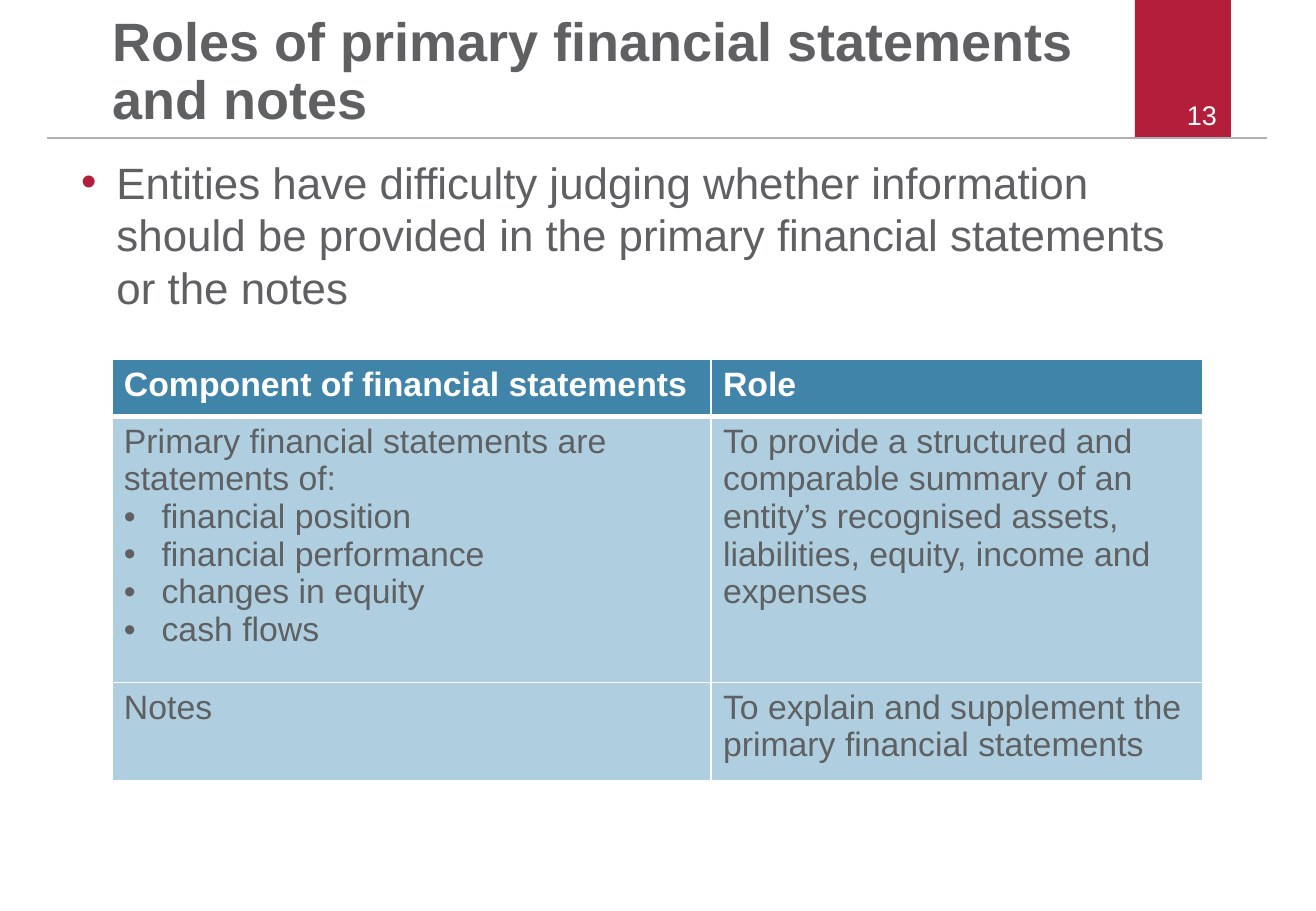
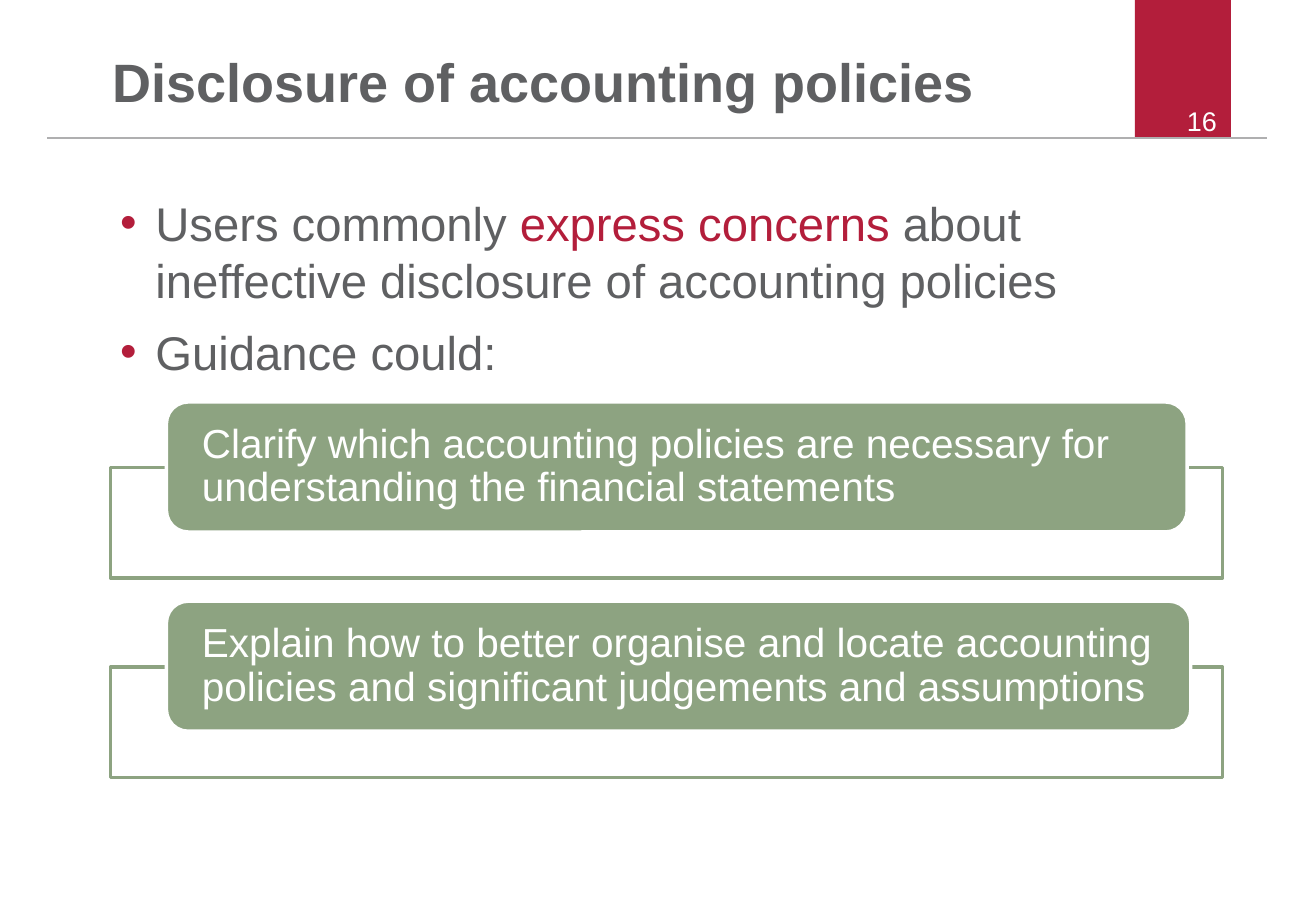
"""Build two slides on financial statement notes and accounting policies."""
from lxml import etree
from pptx import Presentation
from pptx.dml.color import RGBColor
from pptx.enum.shapes import MSO_CONNECTOR, MSO_SHAPE
from pptx.enum.text import MSO_ANCHOR, PP_ALIGN
from pptx.oxml.ns import qn
from pptx.util import Inches, Pt

RECTANGLE, ROUNDED = MSO_SHAPE.RECTANGLE, MSO_SHAPE.ROUNDED_RECTANGLE
STRAIGHT = MSO_CONNECTOR.STRAIGHT
TOP, MIDDLE, BOTTOM = MSO_ANCHOR.TOP, MSO_ANCHOR.MIDDLE, MSO_ANCHOR.BOTTOM
LEFT = PP_ALIGN.LEFT
BLANK_LAYOUT = 6
COLORS = {
    "red": "B31E3B", "text": "5F6062", "rule": "AFAFB0", "white": "FFFFFF",
    "header": "4184A9", "cell": "AFCFE0", "green": "8DA381",
}
FONTS = {
    "title": {"size": Pt(32), "bold": True, "color": "text"},
    "number": {"size": Pt(16), "color": "white"},
    "header": {"size": Pt(20), "bold": True, "color": "white"},
    "cell": {"size": Pt(20), "bold": False, "color": "text"},
    "policy": {"size": Pt(24), "color": "white"},
}


def rgb(name):
    """Return the named colour."""
    return RGBColor.from_string(COLORS[name])


def format_font(font, values):
    """Set the typeface, colour and other attributes of a font."""
    for attribute, value in {"name": "Arial", **values}.items():
        if attribute == "color":
            font.color.rgb = rgb(value)
        else:
            setattr(font, attribute, value)


def format_object(target, values):
    """Set the attributes of an object from a dict."""
    for attribute, value in values.items():
        setattr(target, attribute, value)


def add_bullet(paragraph, margin, hanging, color=None):
    """Give a paragraph a hanging bullet."""
    properties = paragraph._p.get_or_add_pPr()
    properties.set("marL", str(Inches(margin)))
    properties.set("indent", str(-Inches(hanging)))
    if color:
        bullet_color = etree.SubElement(properties, qn("a:buClr"))
        etree.SubElement(bullet_color, qn("a:srgbClr"), val=COLORS[color])
    etree.SubElement(properties, qn("a:buFont"), typeface="Arial")
    etree.SubElement(properties, qn("a:buChar"), char="•")


def add_run(paragraph, text, values):
    """Add a formatted run to a paragraph."""
    run = paragraph.add_run()
    run.text = text
    format_font(run.font, values)


def add_text_box(slide, box, anchor=TOP, wrap=True):
    """Add an empty text box and return its text frame."""
    frame = slide.shapes.add_textbox(*map(Inches, box)).text_frame
    format_object(frame, {"word_wrap": wrap, "vertical_anchor": anchor})
    return frame


def add_box(slide, kind, box, fill, line=None):
    """Add a filled shape with an optional 2 pt outline."""
    shape = slide.shapes.add_shape(kind, *map(Inches, box))
    shape.shadow.inherit = False
    shape.fill.solid()
    shape.fill.fore_color.rgb = rgb(fill)
    if line:
        shape.line.color.rgb = rgb(line)
        shape.line.width = Pt(2)
    else:
        shape.line.fill.background()
    return shape


def add_base_slide(presentation, title, title_height, number, number_top):
    """Add a slide with the band, rule, title and slide number."""
    slide = presentation.slides.add_slide(presentation.slide_layouts[BLANK_LAYOUT])
    add_box(slide, RECTANGLE, (9.34, 0, 0.79, 1.14), "red")
    rule = slide.shapes.add_connector(
        STRAIGHT, *map(Inches, (0.39, 1.14, 10.43, 1.14)))
    rule.line.color.rgb = rgb("rule")
    rule.line.width = Pt(1.2)
    etree.SubElement(rule._element.spPr, qn("a:effectLst"))
    paragraph = add_text_box(
        slide, (0.83, 0, 8.53, title_height), BOTTOM).paragraphs[0]
    paragraph.line_spacing = 0.9
    add_run(paragraph, title, FONTS["title"])
    frame = add_text_box(slide, (9.67, number_top, 0.46, 0.37), wrap=False)
    add_run(frame.paragraphs[0], number, FONTS["number"])
    return slide


def add_bullets(slide, box, size, items):
    """Add red-bulleted paragraphs, each a list of text and colour pairs."""
    frame = add_text_box(slide, box)
    for index, runs in enumerate(items):
        paragraph = frame.add_paragraph() if index else frame.paragraphs[0]
        add_bullet(paragraph, 0.64, 0.29, "red")
        format_object(paragraph, {
            "line_spacing": 1.0, "space_before": Pt(9 if index else 0)})
        for text, color in runs:
            add_run(paragraph, text, {"size": Pt(size), "color": color})


def set_borders(cell, widths):
    """Draw white borders of the given widths around a cell."""
    properties = cell._tc.get_or_add_tcPr()
    for side, width in widths.items():
        line = etree.SubElement(properties, qn(f"a:ln{side}"), w=str(Pt(width)))
        fill = etree.SubElement(line, qn("a:solidFill"))
        etree.SubElement(fill, qn("a:srgbClr"), val=COLORS["white"])


def fill_cell(cell, lines, kind, borders):
    """Fill a cell with a first line and bulleted further lines."""
    set_borders(cell, borders)
    cell.fill.solid()
    cell.fill.fore_color.rgb = rgb(kind)
    for index, text in enumerate(lines):
        frame = cell.text_frame
        paragraph = frame.add_paragraph() if index else frame.paragraphs[0]
        if index:
            add_bullet(paragraph, 0.31, 0.31)
        add_run(paragraph, text, FONTS[kind])


def add_role_table(slide, box, widths, heights, rows):
    """Add a table whose first row is the header."""
    table = slide.shapes.add_table(
        len(rows), len(widths), *map(Inches, box)).table
    for column, width in zip(table.columns, widths):
        column.width = Inches(width)
    for index, (row, height) in enumerate(zip(table.rows, heights)):
        row.height = Inches(height)
        borders = {"L": 1, "R": 1, "T": 3 if index == 1 else 1,
                   "B": 1 if index else 3}
        for cell, lines in zip(row.cells, rows[index]):
            fill_cell(cell, lines, "cell" if index else "header", borders)


def add_policy(slide, top, width, text):
    """Add a green rounded label over an outlined frame."""
    add_box(slide, RECTANGLE, (0.91, top + 0.54, 9.15, 0.91), "white", "green")
    label = add_box(slide, ROUNDED, (1.37, top, width, 1.07), "green", "white")
    frame = label.text_frame
    format_object(frame, {
        "word_wrap": True, "vertical_anchor": MIDDLE,
        "margin_left": Inches(0.24), "margin_right": Inches(0.2),
        "margin_top": 0, "margin_bottom": 0})
    paragraph = frame.paragraphs[0]
    format_object(paragraph, {"alignment": LEFT, "line_spacing": 0.9})
    add_run(paragraph, text, FONTS["policy"])


def build_roles_slide(presentation):
    """Build the slide on the roles of statements and notes."""
    slide = add_base_slide(
        presentation, "Roles of primary financial statements and notes",
        1.13, "13", 0.76)
    add_role_table(slide, (0.92, 2.96, 8.98, 3.47), (4.93, 4.05), (0.47, 2.19, 0.81), [
        [["Component of financial statements"], ["Role"]],
        [["Primary financial statements are statements of:",
          "financial position", "financial performance",
          "changes in equity", "cash flows"],
         ["To provide a structured and comparable summary of an entity’s "
          "recognised assets, liabilities, equity, income and expenses"]],
        [["Notes"],
         ["To explain and supplement the primary financial statements"]],
    ])
    add_bullets(slide, (0.22, 1.23, 9.75, 1.1), 26, [
        [("Entities have difficulty judging whether information should be "
          "provided in the primary financial statements or the notes", "text")],
    ])


def build_policies_slide(presentation):
    """Build the slide on disclosure of accounting policies."""
    slide = add_base_slide(
        presentation, "Disclosure of accounting policies", 0.99, "16", 0.81)
    add_bullets(slide, (0.54, 1.55, 9.75, 1.7), 28, [
        [("Users commonly ", "text"), ("express concerns ", "red"),
         ("about ineffective disclosure of accounting policies", "text")],
        [("Guidance could:", "text")],
    ])
    policies = [
        (8.4, "Clarify which accounting policies are necessary for "
              "understanding the financial statements"),
        (8.43, "Explain how to better organise and locate accounting "
               "policies and significant judgements and assumptions"),
    ]
    for index, (width, text) in enumerate(policies):
        add_policy(slide, 3.31 + 1.64 * index, width, text)


def main():
    """Build and save the presentation."""
    presentation = Presentation()
    presentation.slide_width = Inches(10.83)
    presentation.slide_height = Inches(7.5)
    build_roles_slide(presentation)
    build_policies_slide(presentation)
    presentation.save("out.pptx")


if __name__ == "__main__":
    main()
